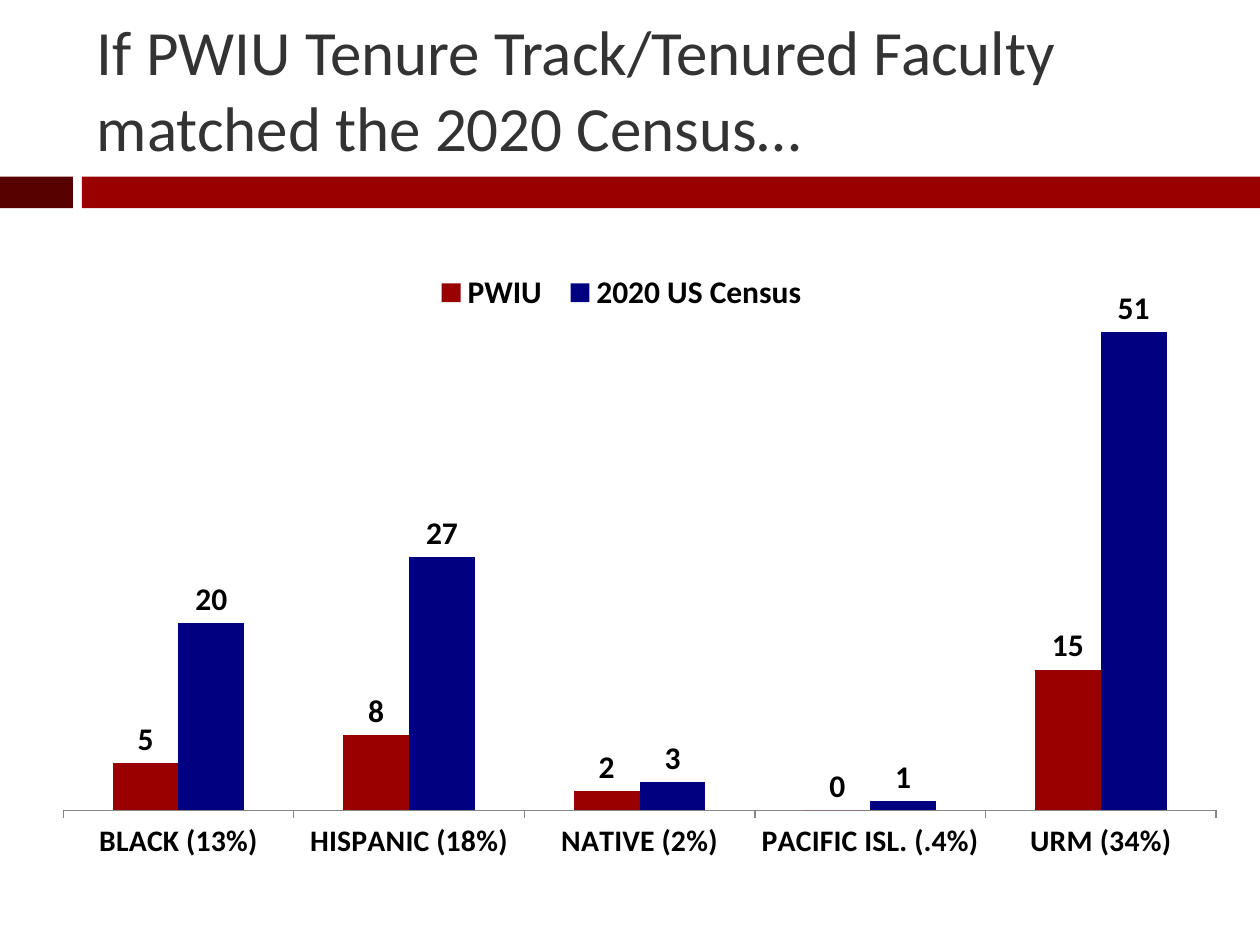
import pptx
import pptx.chart.data
import pptx.dml.color
import pptx.enum.chart
import pptx.enum.shapes
import pptx.enum.text
import pptx.oxml
import pptx.oxml.ns
import pptx.util
from pptx.util import Cm

FONT = "Calibri"
CATEGORIES = ["BLACK (13%)", "HISPANIC (18%)", "NATIVE (2%)",
              "PACIFIC ISL. (.4%)", "URM (34%)"]
SERIES = [
    ("PWIU", [5, 8, 2, 0, 15], "990000"),
    ("2020 US Census", [20, 27, 3, 1, 51], "000080"),
]


def color(value):
    return pptx.dml.color.RGBColor.from_string(value)


def format_font(font, size, bold, value):
    font.name = FONT
    font.size = pptx.util.Pt(size)
    font.bold = bold
    font.color.rgb = color(value)


def set_title(slide, text):
    title = slide.shapes.title
    title.left, title.top, title.width, title.height = (
        Cm(1.7), Cm(0.64), Cm(22.66), Cm(2.29))
    frame = title.text_frame
    frame.text = text
    frame.word_wrap = True
    frame.auto_size = pptx.enum.text.MSO_AUTO_SIZE.NONE
    frame.vertical_anchor = pptx.enum.text.MSO_ANCHOR.MIDDLE
    para = frame.paragraphs[0]
    para.alignment = pptx.enum.text.PP_ALIGN.LEFT
    format_font(para.runs[0].font, 36, False, "333333")


def add_band(slide, left, width, fill):
    band = slide.shapes.add_shape(
        pptx.enum.shapes.MSO_SHAPE.RECTANGLE, left, Cm(3.56), width, Cm(0.64))
    band.shadow.inherit = False
    band.fill.solid()
    band.fill.fore_color.rgb = color(fill)
    band.line.fill.background()


def make_layout(x, y, width, height, inner=False):
    """Build a manual layout from fractions of the chart area."""
    target = '<c:layoutTarget val="inner"/>' if inner else ""
    return pptx.oxml.parse_xml(
        f'<c:layout {pptx.oxml.ns.nsdecls("c")}><c:manualLayout>{target}'
        '<c:xMode val="edge"/><c:yMode val="edge"/>'
        f'<c:x val="{x}"/><c:y val="{y}"/><c:w val="{width}"/><c:h val="{height}"/>'
        '</c:manualLayout></c:layout>')


def format_series(series, fill):
    series.format.fill.solid()
    series.format.fill.fore_color.rgb = color(fill)
    series.invert_if_negative = False
    labels = series.data_labels
    labels.show_value = True
    labels.position = pptx.enum.chart.XL_LABEL_POSITION.OUTSIDE_END
    labels.number_format = "0"
    labels.number_format_is_linked = False
    format_font(labels.font, 18, True, "000000")


def format_axes(chart):
    axis = chart.category_axis
    axis.major_tick_mark = pptx.enum.chart.XL_TICK_MARK.OUTSIDE
    axis.format.line.color.rgb = color("868686")
    format_font(axis.tick_labels.font, 17, True, "000000")
    values = chart.value_axis
    values.minimum_scale, values.maximum_scale = 0, 60
    values.has_major_gridlines = False
    values.visible = False


def format_legend(chart):
    chart.has_legend = True
    legend = chart.legend
    legend.position = pptx.enum.chart.XL_LEGEND_POSITION.TOP
    legend.include_in_layout = False
    format_font(legend.font, 18, True, "000000")
    for layout in legend._element.findall(pptx.oxml.ns.qn("c:layout")):
        legend._element.remove(layout)
    position = legend._element.find(pptx.oxml.ns.qn("c:legendPos"))
    position.addnext(make_layout(0.32, 0.07, 0.33, 0.07))


def add_column_chart(slide):
    data = pptx.chart.data.CategoryChartData()
    data.categories = CATEGORIES
    for name, values, _ in SERIES:
        data.add_series(name, values)
    chart = slide.shapes.add_chart(
        pptx.enum.chart.XL_CHART_TYPE.COLUMN_CLUSTERED,
        Cm(0.79), Cm(4.45), Cm(24.21), Cm(13.82), data).chart
    format_font(chart.font, 18, False, "000000")
    chart.has_title = False
    plot = chart.plots[0]
    plot.gap_width, plot.overlap = 150, 0
    plot.vary_by_categories = False
    for series, (_, _, fill) in zip(plot.series, SERIES):
        format_series(series, fill)
    format_axes(chart)
    format_legend(chart)

    # Fixed plot area
    area = chart._chartSpace.chart.plotArea
    for layout in area.findall(pptx.oxml.ns.qn("c:layout")):
        area.remove(layout)
    area.insert(0, make_layout(0.02, 0.04, 0.96, 0.82, inner=True))


def main():
    deck = pptx.Presentation()
    deck.slide_width, deck.slide_height = Cm(25.4), Cm(19.05)
    slide = deck.slides.add_slide(deck.slide_layouts[5])
    # Heading with its two-part band
    add_band(slide, Cm(0), Cm(1.47), "580101")
    add_band(slide, Cm(1.65), Cm(23.75), "990000")
    set_title(slide, "If PWIU Tenure Track/Tenured Faculty matched the 2020 Census…")
    # Faculty counts by group
    add_column_chart(slide)
    deck.save("out.pptx")


if __name__ == "__main__":
    main()
